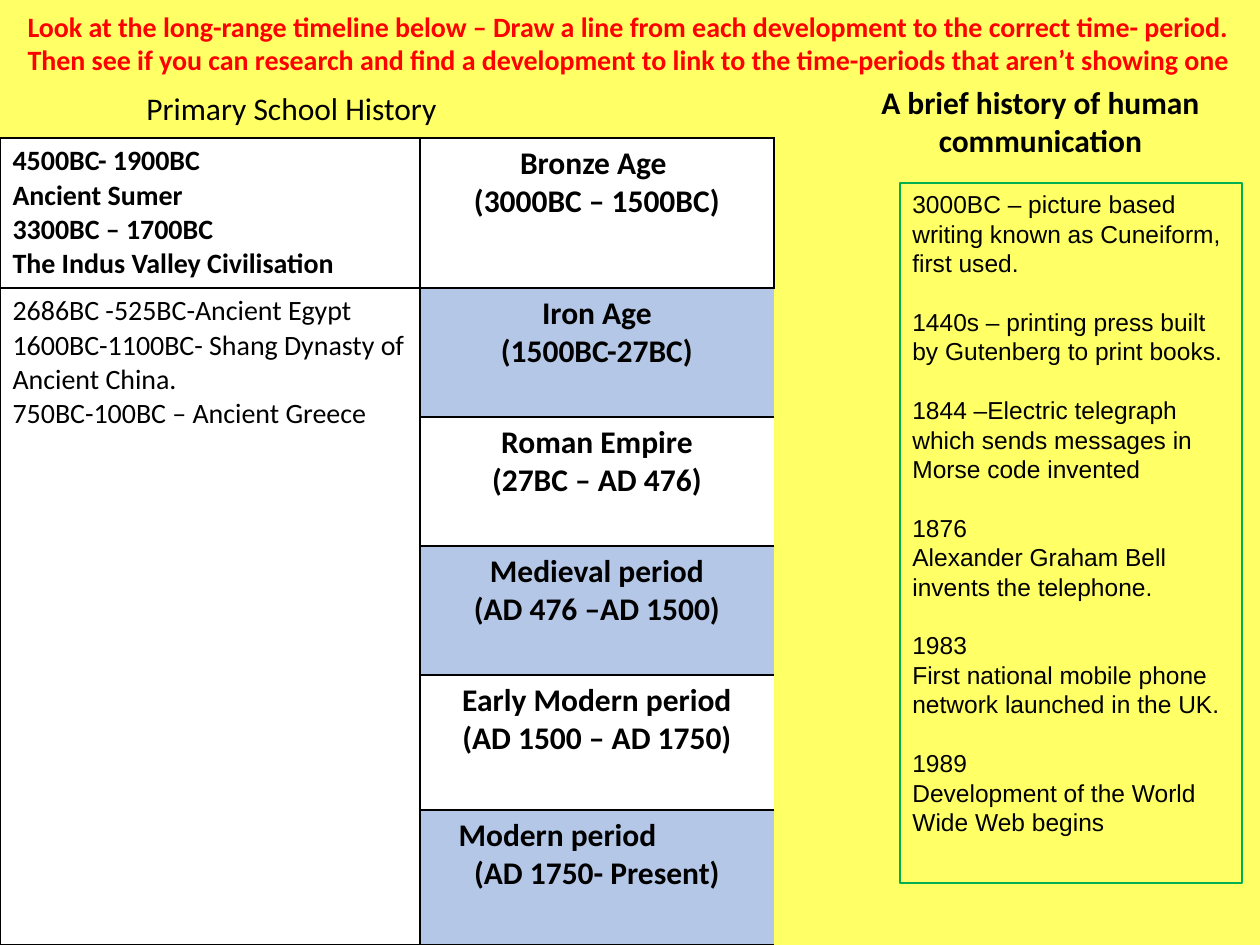
from dataclasses import dataclass

from lxml import etree
from pptx import Presentation
from pptx.dml.color import RGBColor
from pptx.enum.shapes import MSO_SHAPE
from pptx.enum.text import MSO_ANCHOR, MSO_AUTO_SIZE, PP_ALIGN
from pptx.oxml.ns import qn
from pptx.util import Emu, Pt

LEFT, CENTER = PP_ALIGN.LEFT, PP_ALIGN.CENTER
TOP = MSO_ANCHOR.TOP
NO_AUTOFIT = MSO_AUTO_SIZE.NONE
RECT = MSO_SHAPE.RECTANGLE

PX_PER_INCH = 126
TITLE_ONLY = 5
BLACK, RED, GREEN = "000000", "FF0000", "00B050"
YELLOW, WHITE, BLUE = "FFFF66", "FFFFFF", "B4C7E7"


@dataclass
class Style:
    size: int
    bold: bool = False
    align: PP_ALIGN = LEFT
    color: str = BLACK
    font: str = "Calibri"


@dataclass
class Period:
    name: str
    dates: str
    height: int
    indent: int = 0


@dataclass
class Label:
    text: str
    box: tuple[int, int, int, int]
    style: Style


ANCIENT = Style(16, bold=True)
CIVILISATION = Style(16)
PERIOD = Style(18, bold=True, align=CENTER)
EVENT = Style(14, font="Arial")

INSTRUCTION = Label(
    "Look at the long-range timeline below – Draw a line from each development to the "
    "correct time- period. Then see if you can research and find a development to link "
    "to the time-periods that aren’t showing one",
    (15, 3, 1245, 81), Style(16, bold=True, color=RED))
HEADINGS = [
    Label("Primary School History", (134, 83, 373, 50), Style(18)),
    Label("A brief history of human communication", (821, 77, 439, 89),
          Style(18, bold=True, align=CENTER)),
]
ANCIENT_LINES = ["4500BC- 1900BC", "Ancient Sumer", "3300BC – 1700BC",
                 "The Indus Valley Civilisation"]
CIVILISATION_LINES = ["2686BC -525BC-Ancient Egypt",
                      "1600BC-1100BC- Shang Dynasty of Ancient China.",
                      "750BC-100BC – Ancient Greece"]
PERIODS = [
    Period("Bronze Age ", "(3000BC – 1500BC)", 150),
    Period("Iron Age", "(1500BC-27BC)", 129),
    Period("Roman Empire", "(27BC – AD 476)", 129),
    Period("Medieval period", "(AD 476 –AD 1500)", 129),
    Period("Early Modern period", "(AD 1500 – AD 1750)", 135),
    Period("Modern period", "(AD 1750- Present)", 135, indent=26),
]
EVENTS = [
    ["3000BC – picture based writing known as Cuneiform, first used."],
    ["1440s – printing press built by Gutenberg to print books."],
    ["1844 –Electric telegraph which sends messages in Morse code invented"],
    ["1876", "Alexander Graham Bell invents the telephone."],
    ["1983", "First national mobile phone network launched in the UK."],
    ["1989", "Development of the World Wide Web begins"],
]
COLUMNS = [420, 354]
TABLE_TOP = 138


def px(n: int) -> Emu:
    return Emu(round(n * 914400 / PX_PER_INCH))


def rgb(color: str) -> RGBColor:
    return RGBColor.from_string(color)


def write(tf, lines: list[str], style: Style) -> None:
    for i, line in enumerate(lines):
        p = tf.paragraphs[0] if i == 0 else tf.add_paragraph()
        p.alignment = style.align
        r = p.add_run()
        r.text = line
        r.font.size = Pt(style.size)
        r.font.bold = style.bold
        r.font.name = style.font
        r.font.color.rgb = rgb(style.color)


def place(s, box: tuple[int, int, int, int]) -> None:
    s.left, s.top, s.width, s.height = map(px, box)


def prepare(tf) -> None:
    tf.word_wrap = True
    tf.auto_size = NO_AUTOFIT
    tf.vertical_anchor = TOP


def add_label(slide, label: Label) -> None:
    s = slide.shapes.add_textbox(*map(px, label.box))
    prepare(s.text_frame)
    write(s.text_frame, [label.text], label.style)


def set_borders(cell, sides: str) -> None:
    """Rule the given sides (of L, R, T, B) in black and clear the others."""
    tc_pr = cell._tc.get_or_add_tcPr()
    for side in "LRTB":
        ln = etree.SubElement(tc_pr, qn(f"a:ln{side}"), w=str(Pt(1)))
        if side in sides:
            fill = etree.SubElement(ln, qn("a:solidFill"))
            etree.SubElement(fill, qn("a:srgbClr"), val=BLACK)
        else:
            etree.SubElement(ln, qn("a:noFill"))


def fill_cell(cell, lines: list[str], style: Style, color: str, sides: str = "LRTB") -> None:
    set_borders(cell, sides)
    cell.fill.solid()
    cell.fill.fore_color.rgb = rgb(color)
    write(cell.text_frame, lines, style)


def add_timeline(slide) -> None:
    heights = [period.height for period in PERIODS]
    frame = slide.shapes.add_table(len(PERIODS), len(COLUMNS), px(0), px(TABLE_TOP),
                                   px(sum(COLUMNS)), px(sum(heights)))
    table = frame.table
    table.first_row = table.horz_banding = False
    for column, width in zip(table.columns, COLUMNS):
        column.width = px(width)
    for row, height in zip(table.rows, heights):
        row.height = px(height)

    table.cell(1, 0).merge(table.cell(len(PERIODS) - 1, 0))
    fill_cell(table.cell(0, 0), ANCIENT_LINES, ANCIENT, WHITE)
    fill_cell(table.cell(1, 0), CIVILISATION_LINES, CIVILISATION, WHITE)
    for i, period in enumerate(PERIODS):
        cell = table.cell(i, 1)
        fill_cell(cell, [period.name, period.dates], PERIOD,
                  BLUE if i % 2 else WHITE, "LTB" if i else "LRTB")
        if period.indent:
            p = cell.text_frame.paragraphs[0]
            p.alignment = LEFT
            p._p.get_or_add_pPr().set("marL", str(px(period.indent)))


def add_events(slide) -> None:
    s = slide.shapes.add_shape(RECT, *map(px, (900, 183, 342, 700)))
    s.shadow.inherit = False
    s.fill.background()
    s.line.color.rgb = rgb(GREEN)
    s.line.width = Pt(1.25)
    tf = s.text_frame
    prepare(tf)
    write(tf, [line for event in EVENTS for line in event], EVENT)
    first = 0
    for event in EVENTS:
        if first:
            tf.paragraphs[first].space_before = Pt(16.8)
        first += len(event)


def main() -> None:
    prs = Presentation()
    prs.slide_width, prs.slide_height = px(1260), px(945)
    slide = prs.slides.add_slide(prs.slide_layouts[TITLE_ONLY])
    slide.background.fill.solid()
    slide.background.fill.fore_color.rgb = rgb(YELLOW)

    title = slide.shapes.title
    place(title, INSTRUCTION.box)
    prepare(title.text_frame)
    write(title.text_frame, [INSTRUCTION.text], INSTRUCTION.style)

    add_timeline(slide)
    add_events(slide)
    for heading in HEADINGS:
        add_label(slide, heading)
    prs.save("out.pptx")


if __name__ == "__main__":
    main()
